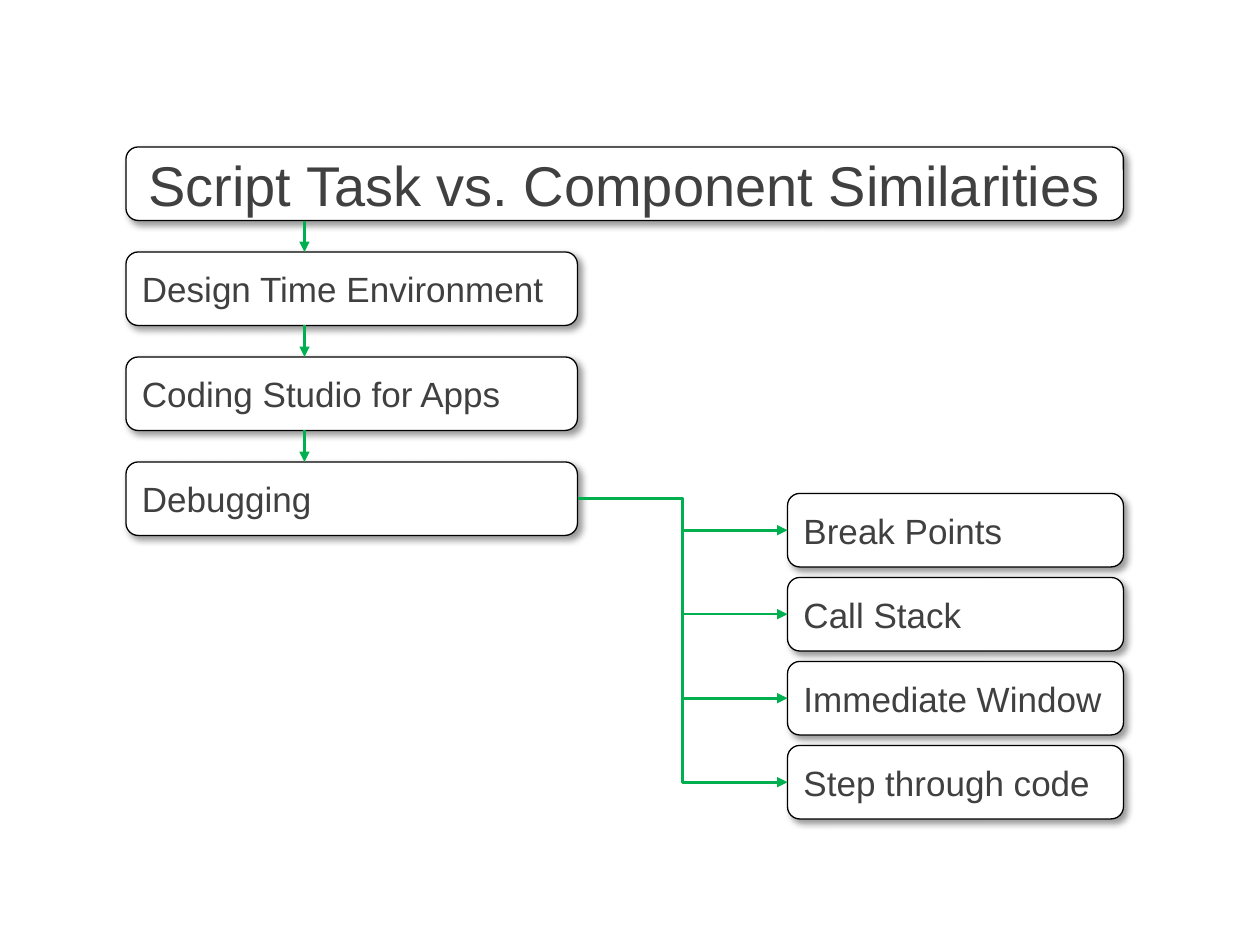
"""Build a slide of linked boxes on script task and component similarities."""
import pptx
import pptx.dml.color
import pptx.enum.shapes
import pptx.enum.text
import pptx.oxml
import pptx.oxml.ns
import pptx.util

COLORS = {"box": "FFFFFF", "border": "000000", "text": "404040", "arrow": "00B050"}
NAMESPACE = pptx.oxml.ns.nsdecls("a")
SHADOW = (
    f'<a:effectLst {NAMESPACE}><a:outerShdw blurRad="50800" dist="38100" dir="2700000" '
    f'algn="tl" rotWithShape="0"><a:srgbClr val="{COLORS["border"]}"><a:alpha val="40000"/>'
    "</a:srgbClr></a:outerShdw></a:effectLst>"
)

presentation = pptx.Presentation()
presentation.slide_width = pptx.util.Inches(10)
presentation.slide_height = pptx.util.Inches(7.5)
slide = presentation.slides.add_slide(presentation.slide_layouts[6])
UNIT = presentation.slide_width // 120
BOX_ROWS = 7
ARROW_COLUMN = 29


def add_box(text, column, row, columns, size=20, alignment=pptx.enum.text.PP_ALIGN.LEFT):
    shape = slide.shapes.add_shape(
        pptx.enum.shapes.MSO_SHAPE.ROUNDED_RECTANGLE,
        column * UNIT, row * UNIT, columns * UNIT, BOX_ROWS * UNIT,
    )
    shape.fill.solid()
    shape.fill.fore_color.rgb = pptx.dml.color.RGBColor.from_string(COLORS["box"])
    shape.line.color.rgb = pptx.dml.color.RGBColor.from_string(COLORS["border"])
    shape.line.width = pptx.util.Pt(0.75)
    shape._element.spPr.append(pptx.oxml.parse_xml(SHADOW))
    shape.text_frame.vertical_anchor = pptx.enum.text.MSO_ANCHOR.MIDDLE
    paragraph = shape.text_frame.paragraphs[0]
    paragraph.text = text
    paragraph.alignment = alignment
    paragraph.font.name = "Arial"
    paragraph.font.size = pptx.util.Pt(size)
    paragraph.font.color.rgb = pptx.dml.color.RGBColor.from_string(COLORS["text"])
    return shape


def add_arrow(kind, begin_x, begin_y, end_x, end_y):
    connector = slide.shapes.add_connector(kind, begin_x, begin_y, end_x, end_y)
    connector.line.color.rgb = pptx.dml.color.RGBColor.from_string(COLORS["arrow"])
    connector.line.width = pptx.util.Pt(1.5)
    connector.line._get_or_add_ln().append(
        pptx.oxml.parse_xml(f'<a:tailEnd {NAMESPACE} type="triangle"/>')
    )
    connector._element.spPr.append(pptx.oxml.parse_xml(f"<a:effectLst {NAMESPACE}/>"))
    return connector


add_box("Script Task vs. Component Similarities", 12, 14, 95, 32, pptx.enum.text.PP_ALIGN.CENTER)

topics = ["Design Time Environment", "Coding Studio for Apps", "Debugging"]
for index, topic in enumerate(topics):
    row = 24 + 10 * index
    topic_box = add_box(topic, 12, row, 43)
    add_arrow(
        pptx.enum.shapes.MSO_CONNECTOR.STRAIGHT,
        ARROW_COLUMN * UNIT, (row - 3) * UNIT, ARROW_COLUMN * UNIT, row * UNIT,
    )

tools = ["Break Points", "Call Stack", "Immediate Window", "Step through code"]
for index, tool in enumerate(tools):
    tool_box = add_box(tool, 75, 47 + 8 * index, 32)
    branch = add_arrow(pptx.enum.shapes.MSO_CONNECTOR.ELBOW, 0, 0, UNIT, UNIT)
    branch.begin_connect(topic_box, 3)
    branch.end_connect(tool_box, 1)

presentation.save("out.pptx")
